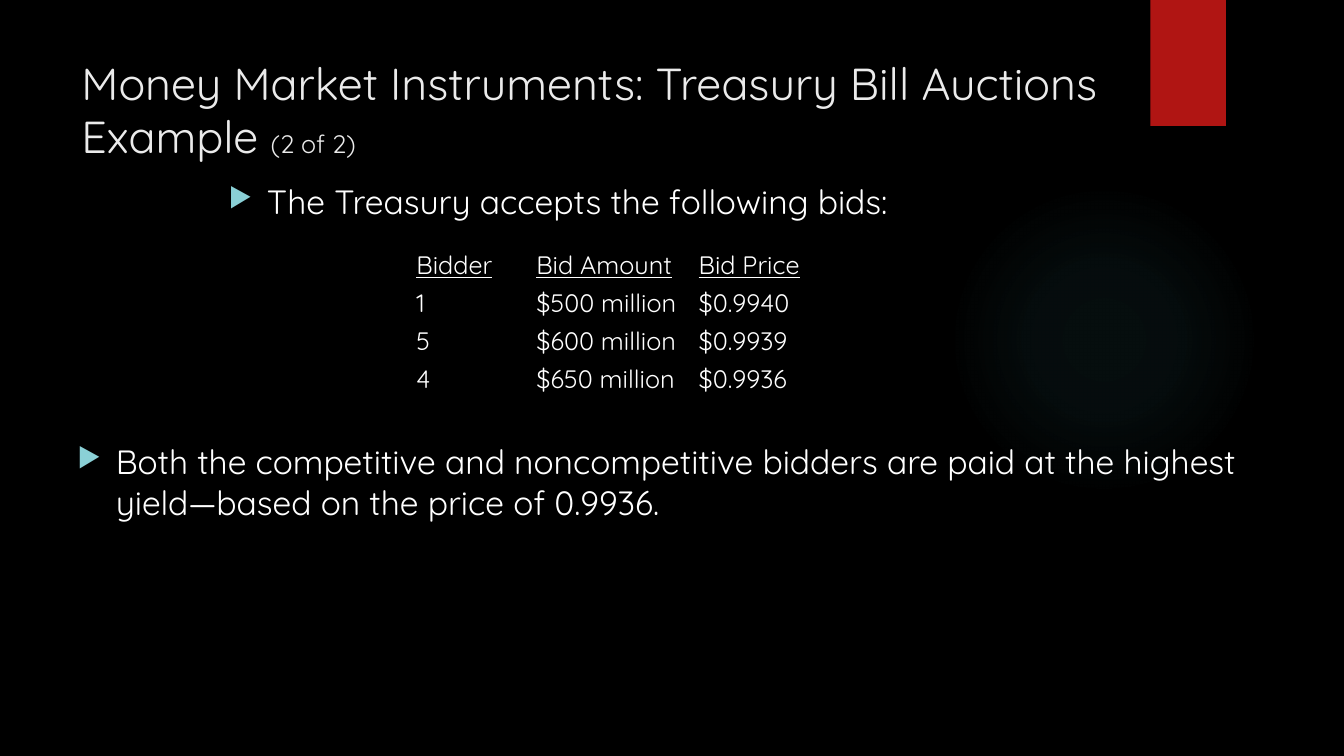
from dataclasses import dataclass

from lxml import etree
from pptx import Presentation
from pptx.dml.color import RGBColor
from pptx.enum.shapes import MSO_SHAPE
from pptx.enum.text import MSO_ANCHOR
from pptx.oxml import parse_xml
from pptx.oxml.ns import nsdecls, qn
from pptx.util import Inches, Pt


@dataclass(frozen=True)
class Theme:
    font: str = "Quicksand"
    background: str = "000000"
    glow: str = "50B9C1"
    ribbon: str = "B01513"
    title: str = "EBEBEB"
    text: str = "FFFFFF"
    bullet: str = "8AD0D6"
    title_size: int = 32
    body_size: int = 24
    small_size: int = 18


THEME = Theme()
NO_TABLE_STYLE = "{2D5ABB26-0587-4C30-8999-92F81FD0307C}"
BIDS = [
    ("Bidder", "Bid Amount", "Bid Price"),
    ("1", "$500 million", "$0.9940"),
    ("5", "$600 million", "$0.9939"),
    ("4", "$650 million", "$0.9936"),
]
BID_COLUMNS = (1.19, 1.61, 1.12)


def inches(box):
    return [Inches(length) for length in box]


def style(font, size, color):
    font.name = THEME.font
    font.size = Pt(size)
    font.color.rgb = RGBColor.from_string(color)


def add_plain_shape(slide, kind, box):
    shape = slide.shapes.add_shape(kind, *inches(box))
    shape.shadow.inherit = False
    shape.line.fill.background()
    return shape


def add_glow(slide, box):
    """Faint circle of light that fades out from its centre."""
    glow = add_plain_shape(slide, MSO_SHAPE.OVAL, box)
    stops = "".join(
        f'<a:gs pos="{position * 1000}"><a:srgbClr val="{THEME.glow}">'
        f'<a:alpha val="{opacity * 1000}"/></a:srgbClr></a:gs>'
        for position, opacity in ((0, 7), (36, 6), (69, 0))
    )
    gradient = parse_xml(
        f'<a:gradFill {nsdecls("a")}><a:gsLst>{stops}</a:gsLst><a:path path="circle">'
        '<a:fillToRect l="50000" t="50000" r="50000" b="50000"/></a:path></a:gradFill>'
    )
    glow._element.spPr.find(qn("a:prstGeom")).addnext(gradient)


def add_ribbon(slide, box):
    ribbon = add_plain_shape(slide, MSO_SHAPE.RECTANGLE, box)
    ribbon.fill.solid()
    ribbon.fill.fore_color.rgb = RGBColor.from_string(THEME.ribbon)


def add_text_frame(slide, box):
    frame = slide.shapes.add_textbox(*inches(box)).text_frame
    frame.word_wrap = True
    frame.vertical_anchor = MSO_ANCHOR.TOP
    return frame


def add_title(slide, box, heading, part):
    paragraph = add_text_frame(slide, box).paragraphs[0]
    for text, size in ((heading, THEME.title_size), (part, THEME.small_size)):
        run = paragraph.add_run()
        run.text = text
        style(run.font, size, THEME.title)


def add_bullet(slide, box, text):
    paragraph = add_text_frame(slide, box).paragraphs[0]
    paragraph.text = text
    properties = paragraph._p.get_or_add_pPr()
    properties.set("marL", str(Inches(0.38)))
    properties.set("indent", str(Inches(-0.38)))
    color = etree.SubElement(properties, qn("a:buClr"))
    etree.SubElement(color, qn("a:srgbClr"), val=THEME.bullet)
    etree.SubElement(properties, qn("a:buSzPct"), val="80000")
    etree.SubElement(properties, qn("a:buChar"), char="▶")
    style(paragraph.font, THEME.body_size, THEME.text)


def add_bid_table(slide, box):
    frame = slide.shapes.add_table(len(BIDS), len(BID_COLUMNS), *inches(box))
    table = frame.table
    table.first_row = table.horz_banding = False
    frame._element.find(".//" + qn("a:tableStyleId")).text = NO_TABLE_STYLE
    for column, width in zip(table.columns, BID_COLUMNS):
        column.width = Inches(width)
    for row_index, bid in enumerate(BIDS):
        for column_index, value in enumerate(bid):
            cell = table.cell(row_index, column_index)
            cell.fill.background()
            cell.margin_left = cell.margin_right = Inches(0.05)
            cell.margin_top = cell.margin_bottom = 0
            cell.text = value
            paragraph = cell.text_frame.paragraphs[0]
            paragraph.line_spacing = 0.9
            style(paragraph.font, THEME.small_size, THEME.text)
            paragraph.font.underline = row_index == 0


def add_auction_slide(presentation):
    slide = presentation.slides.add_slide(presentation.slide_layouts[6])
    slide.background.fill.solid()
    slide.background.fill.fore_color.rgb = RGBColor.from_string(THEME.background)
    add_glow(slide, (9.41, 1.83, 3.08, 3.08))
    add_ribbon(slide, (11.41, 0, 0.75, 1.25))
    add_title(slide, (0.71, 0.5, 10.29, 1.53),
              "Money Market Instruments: Treasury Bill Auctions Example ", "(2 of 2)")
    add_bullet(slide, (2.17, 1.75, 9, 0.5), "The Treasury accepts the following bids:")
    add_bullet(slide, (0.67, 4.33, 12, 2.37),
               "Both the competitive and noncompetitive bidders are paid at the highest "
               "yield—based on the price of 0.9936.")
    add_bid_table(slide, (4.08, 2.5, sum(BID_COLUMNS), 1.51))


def main():
    presentation = Presentation()
    presentation.slide_width = Inches(13.33)
    presentation.slide_height = Inches(7.5)
    add_auction_slide(presentation)
    presentation.save("out.pptx")


if __name__ == "__main__":
    main()
